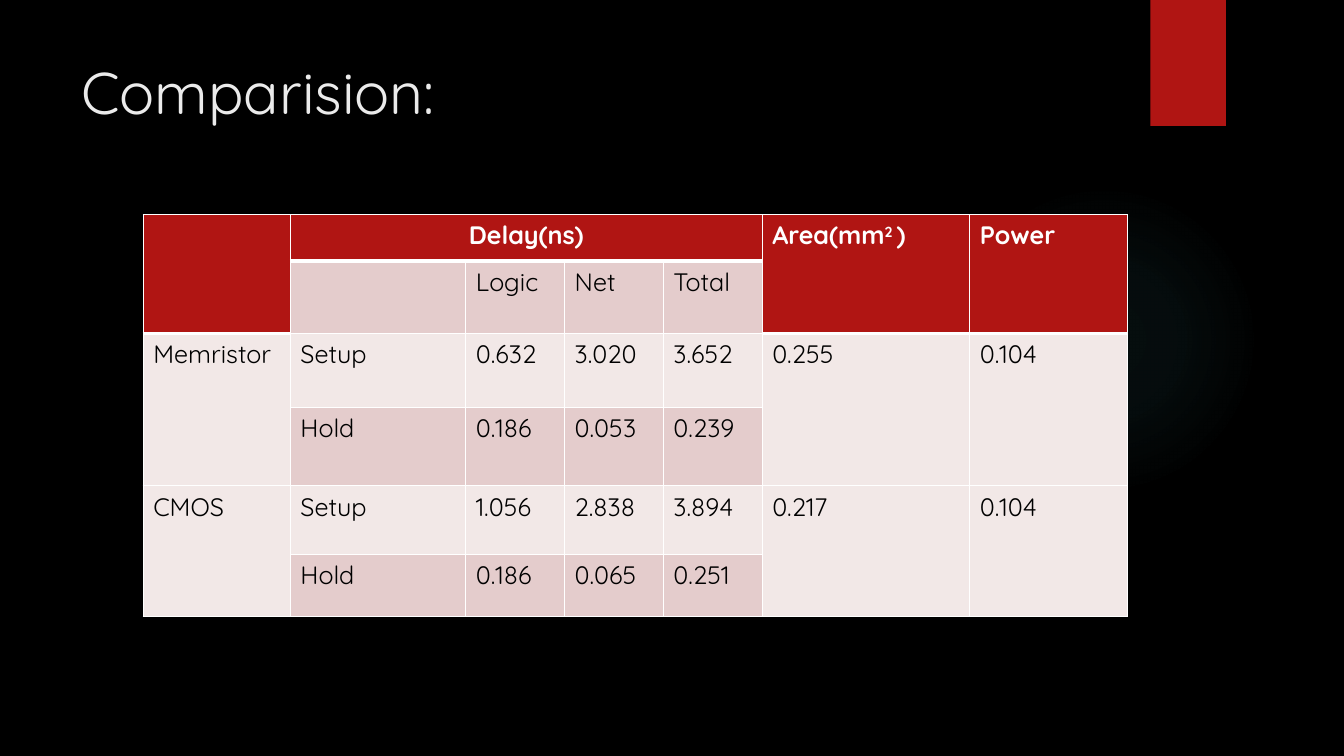
from lxml.etree import SubElement
from pptx import Presentation
from pptx.dml.color import RGBColor
from pptx.enum.shapes import MSO_SHAPE
from pptx.enum.text import MSO_ANCHOR, PP_ALIGN
from pptx.oxml import parse_xml
from pptx.oxml.ns import nsdecls, qn
from pptx.util import Pt

PX = 9144
COLORS = {
    "background": "000000",
    "accent": "B01513",
    "glow": "50B9C1",
    "title": "EBEBEB",
    "header_text": "FFFFFF",
    "border": "FFFFFF",
    "body_text": "000000",
    "light_band": "F2E8E7",
    "dark_band": "E4CCCC",
}
COLUMN_WIDTHS = [146, 174, 98, 98, 98, 206, 156]
ROW_HEIGHTS = [46, 72, 73, 78, 68, 62]
COMPARISON = [
    ["", "Delay(ns)", "", "", "", "Area(mm^2 ^)", "Power"],
    ["", "", "Logic", "Net", "Total", "", ""],
    ["Memristor", "Setup", "0.632", "3.020", "3.652", "0.255", "0.104"],
    ["", "Hold", "0.186", "0.053", "0.239", "", ""],
    ["CMOS", "Setup", "1.056", "2.838", "3.894", "0.217", "0.104"],
    ["", "Hold", "0.186", "0.065", "0.251", "", ""],
]
TALL_COLUMNS = (0, 5, 6)


def is_header(row, column):
    return row == 0 or (row == 1 and column in TALL_COLUMNS)


def band(row, column):
    if is_header(row, column):
        return "accent"
    return "dark_band" if row % 2 and column not in TALL_COLUMNS else "light_band"


class SlideBuilder:
    """Draws styled elements on the current slide."""

    def __init__(self, presentation, font):
        self.font = font
        self.slide = presentation.slides.add_slide(presentation.slide_layouts[6])
        self.paint(self.slide.background.fill, "background")

    def paint(self, fill, color):
        fill.solid()
        fill.fore_color.rgb = RGBColor.from_string(COLORS[color])

    def add_text(self, paragraph, text, color, **formats):
        for index, part in enumerate(text.split("^")):
            run = paragraph.add_run()
            run.text = part
            for name, value in {"name": self.font, **formats}.items():
                setattr(run.font, name, value)
            run.font.color.rgb = RGBColor.from_string(COLORS[color])
            if index % 2:
                run._r.get_or_add_rPr().set("baseline", "30000")

    def shape(self, kind, *box):
        shape = self.slide.shapes.add_shape(kind, *(n * PX for n in box))
        shape.line.fill.background()
        shape.shadow.inherit = False
        return shape

    def glow(self, *box):
        glow = self.shape(MSO_SHAPE.OVAL, *box)
        stops = "".join(
            f'<a:gs pos="{position}000"><a:srgbClr val="{COLORS["glow"]}">'
            f'<a:alpha val="{alpha}000"/></a:srgbClr></a:gs>'
            for position, alpha in [(0, 7), (36, 6), (69, 0)]
        )
        gradient = parse_xml(
            f'<a:gradFill {nsdecls("a")} rotWithShape="1"><a:gsLst>{stops}</a:gsLst>'
            '<a:path path="circle"><a:fillToRect l="50000" t="50000" r="50000" b="50000"/>'
            "</a:path></a:gradFill>"
        )
        glow._element.spPr.find(qn("a:prstGeom")).addnext(gradient)

    def ribbon(self, *box):
        ribbon = self.shape(MSO_SHAPE.RECTANGLE, *box)
        self.paint(ribbon.fill, "accent")
        effects = ribbon._element.spPr.find(qn("a:effectLst"))
        effects.append(parse_xml(
            f'<a:outerShdw {nsdecls("a")} blurRad="{Pt(3)}" dist="{Pt(2)}" dir="5400000">'
            f'<a:srgbClr val="{COLORS["background"]}"><a:alpha val="45000"/></a:srgbClr>'
            "</a:outerShdw>"
        ))

    def title(self, text, *box):
        frame = self.slide.shapes.add_textbox(*(n * PX for n in box)).text_frame
        frame.word_wrap = True
        frame.vertical_anchor = MSO_ANCHOR.TOP
        self.add_text(frame.paragraphs[0], text, "title", size=Pt(42))

    def border(self, cell, side, points):
        line = SubElement(cell._tc.get_or_add_tcPr(), qn(f"a:ln{side}"), w=str(Pt(points)))
        fill = SubElement(line, qn("a:solidFill"))
        SubElement(fill, qn("a:srgbClr"), val=COLORS["border"])

    def table(self, rows, left, top):
        table = self.slide.shapes.add_table(
            len(rows), len(COLUMN_WIDTHS), left * PX, top * PX,
            sum(COLUMN_WIDTHS) * PX, sum(ROW_HEIGHTS) * PX,
        ).table
        for column, width in zip(table.columns, COLUMN_WIDTHS):
            column.width = width * PX
        for row, height in zip(table.rows, ROW_HEIGHTS):
            row.height = height * PX
        for row, texts in enumerate(rows):
            for column, text in enumerate(texts):
                cell = table.cell(row, column)
                header = is_header(row, column)
                below_header = row > 0 and is_header(row - 1, column)
                weights = {"L": 1, "R": 1, "T": 3 if below_header else 1, "B": 3 if header else 1}
                for side, points in weights.items():
                    self.border(cell, side, points)
                self.paint(cell.fill, band(row, column))
                if text:
                    color = "header_text" if header else "body_text"
                    self.add_text(cell.text_frame.paragraphs[0], text, color, size=Pt(18), bold=header)
        for column in TALL_COLUMNS:
            for row in range(0, len(rows), 2):
                table.cell(row, column).merge(table.cell(row + 1, column))
        delay = table.cell(0, 1)
        delay.merge(table.cell(0, 4))
        delay.text_frame.paragraphs[0].alignment = PP_ALIGN.CENTER


def main():
    presentation = Presentation()
    presentation.slide_width = 1333 * PX
    presentation.slide_height = 750 * PX
    builder = SlideBuilder(presentation, "Quicksand")
    builder.glow(941, 183, 308, 308)
    builder.ribbon(1141, 0, 75, 125)
    builder.title("Comparision:", 71, 50, 1029, 153)
    builder.table(COMPARISON, 142, 213)
    presentation.save("out.pptx")


if __name__ == "__main__":
    main()
